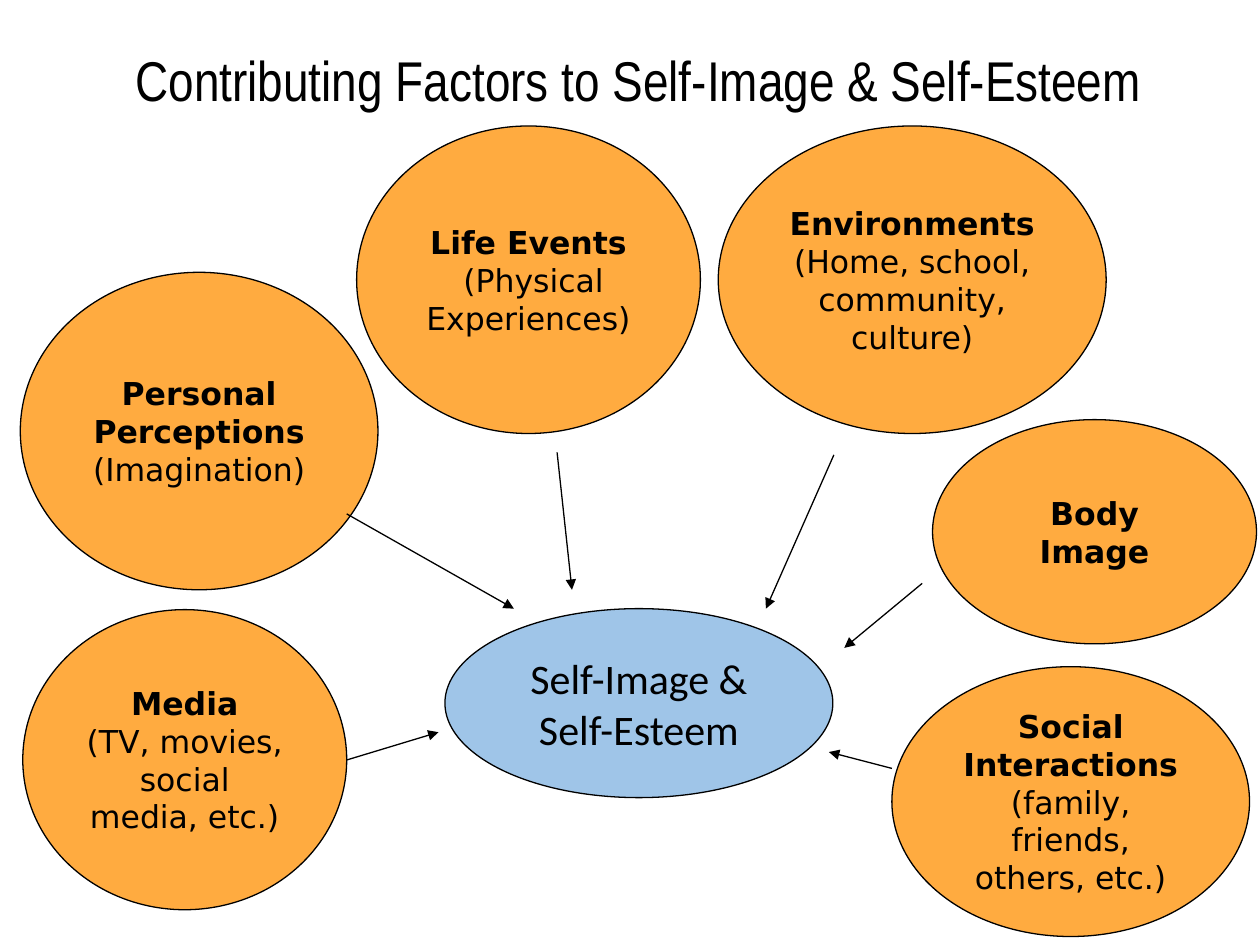
import dataclasses

import pptx
import pptx.dml.color
import pptx.enum.shapes
import pptx.enum.text
import pptx.oxml
import pptx.oxml.ns
import pptx.util
from pptx.util import Cm

COLORS = {"ink": "000000", "factor": "FFAB40", "center": "9FC5E8"}


@dataclasses.dataclass
class Bubble:
    box: tuple[float, float, float, float]
    head: str = ""
    note: str = ""
    fill: str = "factor"
    font: str = "DejaVu Sans"
    size: int = 18


@dataclasses.dataclass
class Arrow:
    start: tuple[float, float]
    end: tuple[float, float]


TITLE = Bubble((0.41, 0, 24.94, 3.18), font="Arial Narrow", size=32,
               note="Contributing Factors to Self-Image & Self-Esteem")

BUBBLES = [
    Bubble((8.97, 12.27, 7.82, 3.81), note="Self-Image & Self-Esteem",
           fill="center", font="Calibri", size=24),
    Bubble((0.46, 12.29, 6.53, 6.05), "Media", "(TV, movies, social media, etc.)"),
    Bubble((0.41, 5.49, 7.21, 6.4), "Personal Perceptions", "(Imagination)"),
    Bubble((18.8, 8.46, 6.53, 4.52), "Body Image"),
    Bubble((14.48, 2.54, 7.82, 6.2), "Environments",
           "(Home, school, community, culture)"),
    Bubble((7.19, 2.54, 6.93, 6.2), "Life Events", " (Physical Experiences)"),
    Bubble((17.98, 13.44, 7.21, 5.44), "Social Interactions",
           "(family, friends, others, etc.)"),
]

ARROWS = [
    Arrow((6.99, 15.32), (8.84, 14.76)),
    Arrow((6.99, 10.36), (10.36, 12.27)),
    Arrow((11.23, 9.12), (11.53, 11.89)),
    Arrow((16.81, 9.17), (15.44, 12.27)),
    Arrow((17.98, 15.49), (16.71, 15.16)),
    Arrow((18.59, 11.76), (17.02, 13.06)),
]


def color(name: str) -> pptx.dml.color.RGBColor:
    return pptx.dml.color.RGBColor.from_string(COLORS[name])


def write(shape, item: Bubble) -> None:
    """Centre a bold heading and a plain note in the shape."""
    frame = shape.text_frame
    frame.word_wrap = True
    frame.vertical_anchor = pptx.enum.text.MSO_ANCHOR.MIDDLE
    para = frame.paragraphs[0]
    para.alignment = pptx.enum.text.PP_ALIGN.CENTER
    para.font.name = item.font
    para.font.size = pptx.util.Pt(item.size)
    para.font.color.rgb = color("ink")
    if item.head:
        run = para.add_run()
        run.text = item.head
        run.font.bold = True
    if item.head and item.note:
        para.add_line_break()
    if item.note:
        para.add_run().text = item.note


def outline(line) -> None:
    line.color.rgb = color("ink")
    line.width = pptx.util.Pt(0.75)


def draw_bubble(slide, item: Bubble) -> None:
    shape = slide.shapes.add_shape(
        pptx.enum.shapes.MSO_SHAPE.OVAL, *map(Cm, item.box))
    shape.shadow.inherit = False
    shape.fill.solid()
    shape.fill.fore_color.rgb = color(item.fill)
    outline(shape.line)
    write(shape, item)


def draw_arrow(slide, item: Arrow) -> None:
    link = slide.shapes.add_connector(
        pptx.enum.shapes.MSO_CONNECTOR.STRAIGHT,
        *map(Cm, item.start + item.end))
    outline(link.line)
    props = link._element.spPr
    tip = pptx.oxml.parse_xml(
        f'<a:tailEnd {pptx.oxml.ns.nsdecls("a")} type="triangle"/>')
    props.get_or_add_ln().append(tip)
    props.append(pptx.oxml.parse_xml(
        f'<a:effectLst {pptx.oxml.ns.nsdecls("a")}/>'))


def main() -> None:
    deck = pptx.Presentation()
    deck.slide_width, deck.slide_height = Cm(25.4), Cm(19.05)
    slide = deck.slides.add_slide(deck.slide_layouts[6])
    write(slide.shapes.add_textbox(*map(Cm, TITLE.box)), TITLE)
    for bubble in BUBBLES:
        draw_bubble(slide, bubble)
    for arrow in ARROWS:
        draw_arrow(slide, arrow)
    deck.save("out.pptx")


if __name__ == "__main__":
    main()
